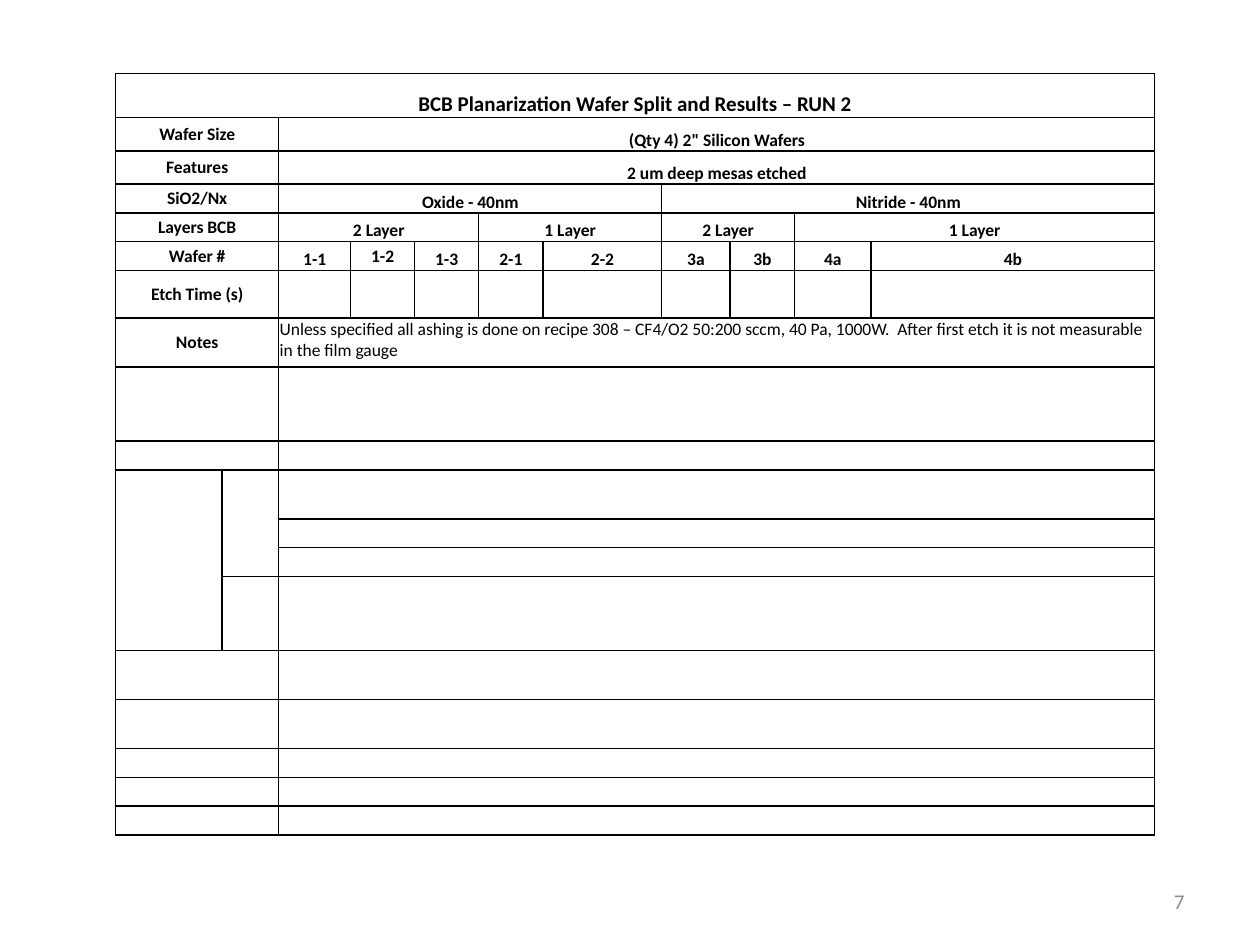
from lxml import etree
from pptx import Presentation
from pptx.dml.color import RGBColor
from pptx.enum.text import MSO_ANCHOR, PP_ALIGN
from pptx.oxml.ns import qn
from pptx.util import Cm, Pt

MIDDLE, BOTTOM, TOP = MSO_ANCHOR.MIDDLE, MSO_ANCHOR.BOTTOM, MSO_ANCHOR.TOP
CENTER, LEFT, RIGHT = PP_ALIGN.CENTER, PP_ALIGN.LEFT, PP_ALIGN.RIGHT
BLACK = RGBColor(0x00, 0x00, 0x00)
GREY = RGBColor(0x8C, 0x8C, 0x8C)
FONT = "Calibri"

COL_WIDTHS = [2.15, 1.14, 1.45, 1.29, 1.29, 1.3, 2.39, 1.38, 1.3, 1.54, 5.72]
SMALL, MEDIUM, LARGE = 0.58, 0.99, 1.49
ROW_HEIGHTS = [0.89, 0.67, 0.67, SMALL, SMALL, SMALL, 0.96, MEDIUM, LARGE,
               SMALL, MEDIUM, SMALL, SMALL, LARGE, MEDIUM, MEDIUM,
               SMALL, SMALL, SMALL]
LAST_COL = len(COL_WIDTHS) - 1

TITLE = "BCB Planarization Wafer Split and Results – RUN 2"
NOTES = ("Unless specified all ashing is done on recipe 308 – CF4/O2 50:200 sccm, "
         "40 Pa, 1000W.  After first etch it is not measurable in the film gauge")
ROW_LABELS = ["Wafer Size", "Features", "SiO2/Nx", "Layers BCB", "Wafer #",
              "Etch Time (s)", "Notes"]
SPLITS = {
    1: [('(Qty 4) 2" Silicon Wafers', 9)],
    2: [("2 um deep mesas etched", 9)],
    3: [("Oxide - 40nm", 5), ("Nitride - 40nm", 4)],
    4: [("2 Layer", 3), ("1 Layer", 2), ("2 Layer", 2), ("1 Layer", 2)],
    5: [(w, 1) for w in ("1-1", "1-2", "1-3", "2-1", "2-2", "3a", "3b", "4a", "4b")],
}
NOTES_ROW = 7
GROUP_ROWS = range(10, 14)


def write(tf, text, size, align, color=BLACK, bold=False):
    p = tf.paragraphs[0]
    p.alignment = align
    r = p.add_run()
    r.text = text
    r.font.name = FONT
    r.font.size = Pt(size)
    r.font.bold = bold
    r.font.color.rgb = color


def fill_cell(cell, text, anchor=BOTTOM, size=10, align=CENTER, bold=True):
    cell.vertical_anchor = anchor
    write(cell.text_frame, text, size, align, bold=bold)


def format_cell(cell):
    cell.margin_left = cell.margin_right = cell.margin_top = Cm(0.02)
    cell.margin_bottom = 0
    tc_pr = cell._tc.get_or_add_tcPr()
    for side in ("a:lnL", "a:lnR", "a:lnT", "a:lnB"):
        ln = etree.SubElement(tc_pr, qn(side), w=str(Pt(1)))
        solid = etree.SubElement(ln, qn("a:solidFill"))
        etree.SubElement(solid, qn("a:srgbClr"), val=str(BLACK))
    cell.fill.background()
    if not cell.text_frame.text:
        p = cell.text_frame.paragraphs[0]
        etree.SubElement(p._p, qn("a:endParaRPr"), sz="800")


def merge_cells(table):
    def merge(top, left, bottom, right):
        table.cell(top, left).merge(table.cell(bottom, right))

    merge(0, 0, 0, LAST_COL)
    for row in range(1, len(ROW_HEIGHTS)):
        if row not in GROUP_ROWS:
            merge(row, 0, row, 1)
        if row >= NOTES_ROW:
            merge(row, 2, row, LAST_COL)
    merge(GROUP_ROWS[0], 0, GROUP_ROWS[-1], 0)
    merge(GROUP_ROWS[0], 1, GROUP_ROWS[-2], 1)


def add_wafer_table(s, x, y):
    frame = s.shapes.add_table(len(ROW_HEIGHTS), len(COL_WIDTHS), Cm(x), Cm(y),
                               Cm(sum(COL_WIDTHS)), Cm(sum(ROW_HEIGHTS)))
    table = frame.table
    table.first_row = table.horz_banding = False
    for col, width in zip(table.columns, COL_WIDTHS):
        col.width = Cm(width)
    for row, height in zip(table.rows, ROW_HEIGHTS):
        row.height = Cm(height)
    merge_cells(table)

    fill_cell(table.cell(0, 0), TITLE, size=12)
    for row, label in enumerate(ROW_LABELS, 1):
        fill_cell(table.cell(row, 0), label, MIDDLE)
    for row, groups in SPLITS.items():
        col = 2
        for text, span in groups:
            cell = table.cell(row, col)
            if span > 1:
                cell.merge(table.cell(row, col + span - 1))
            fill_cell(cell, text, MIDDLE if text == "1-2" else BOTTOM)
            col += span
    fill_cell(table.cell(NOTES_ROW, 2), NOTES, TOP, align=LEFT, bold=False)
    for cell in table.iter_cells():
        format_cell(cell)


def add_page_number(s, x, y, w, h):
    tf = s.shapes.add_textbox(Cm(x), Cm(y), Cm(w), Cm(h)).text_frame
    tf.word_wrap = True
    tf.vertical_anchor = MIDDLE
    write(tf, "7", 12, RIGHT, GREY)


def main():
    prs = Presentation()
    prs.slide_width, prs.slide_height = Cm(25.4), Cm(19.05)
    s = prs.slides.add_slide(prs.slide_layouts[6])
    add_wafer_table(s, 2.33, 1.48)
    add_page_number(s, 18.2, 17.66, 5.93, 1.01)
    prs.save("out.pptx")


if __name__ == "__main__":
    main()
